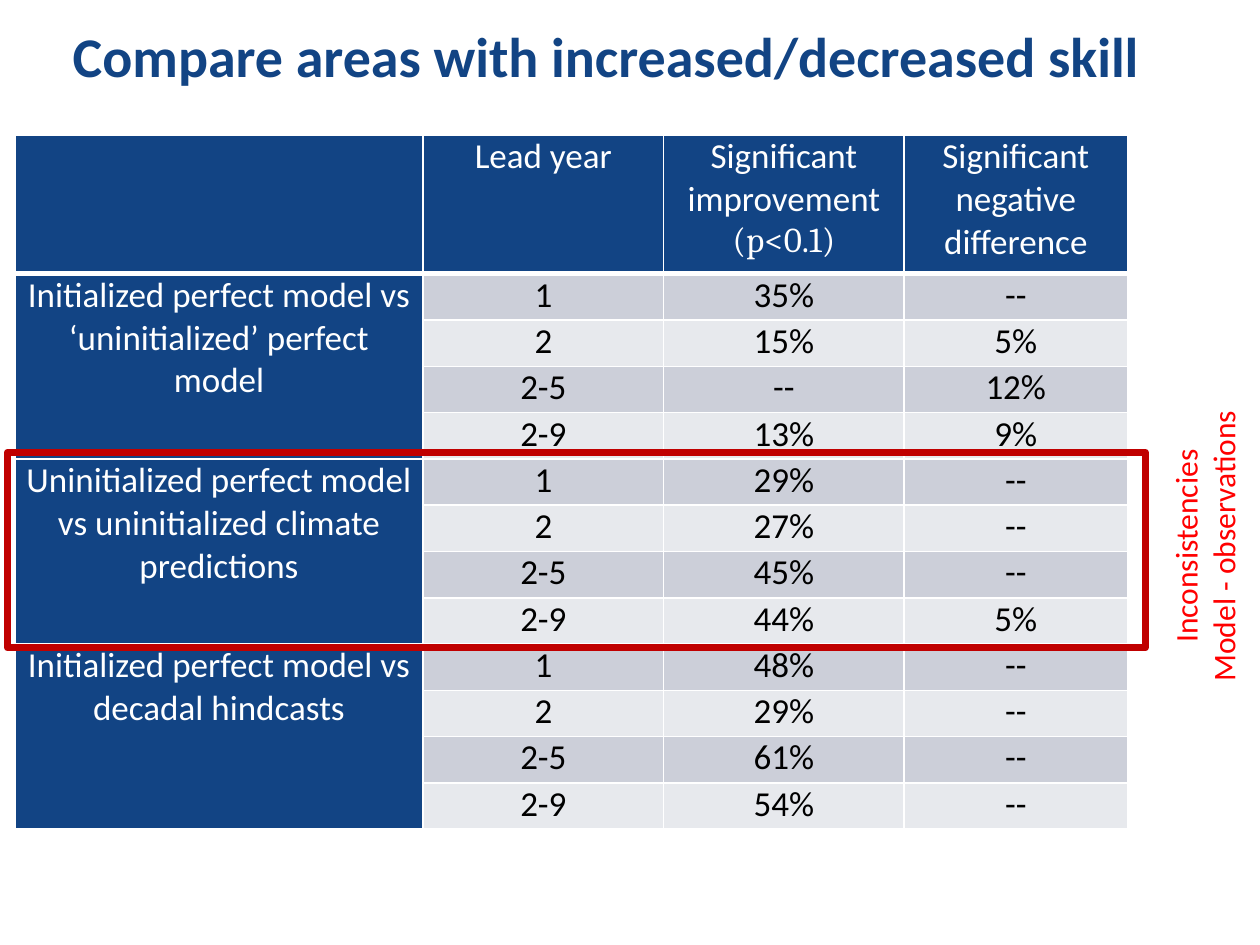
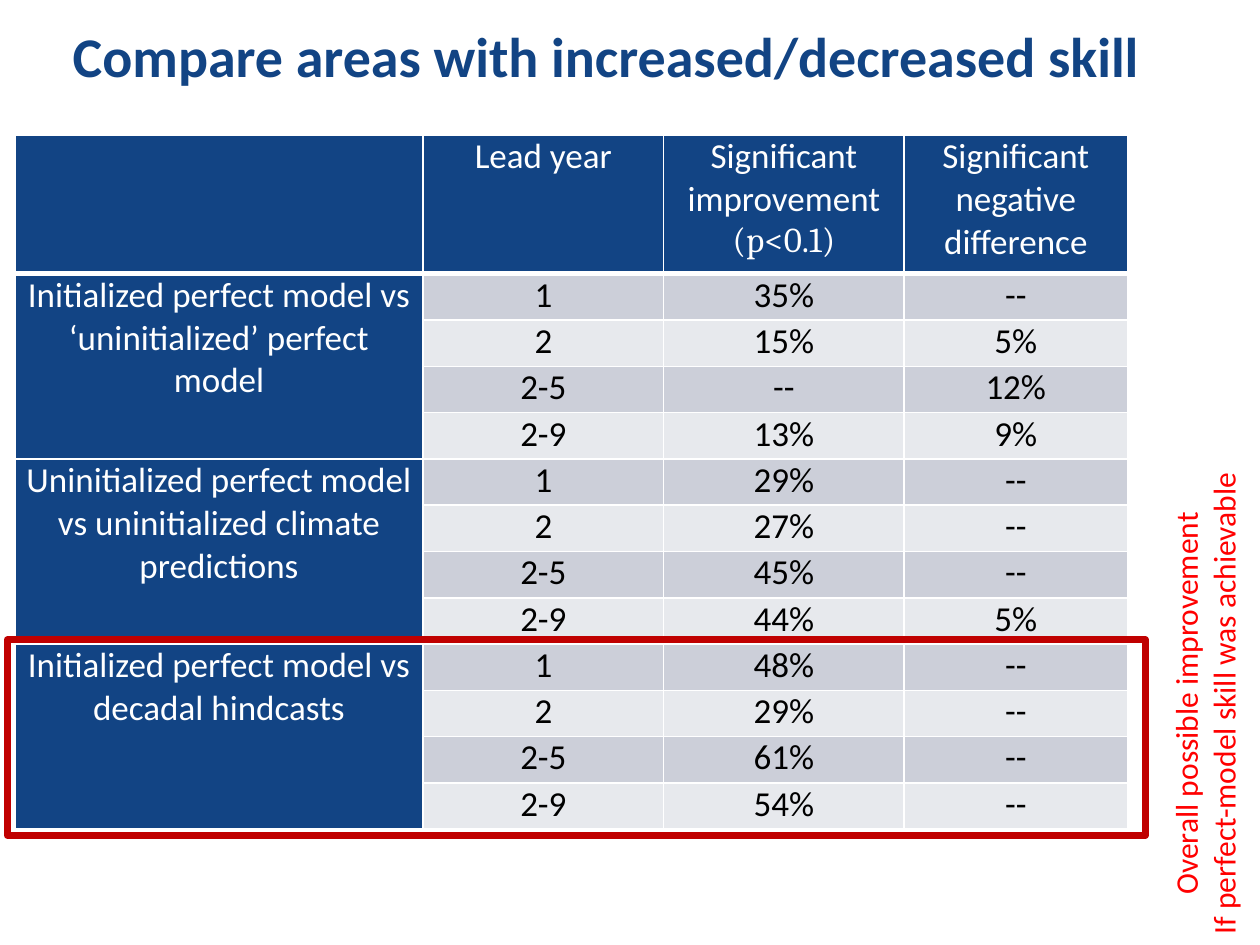
from lxml import etree
from pptx import Presentation
from pptx.dml.color import RGBColor
from pptx.enum.shapes import MSO_SHAPE
from pptx.enum.text import MSO_ANCHOR, MSO_AUTO_SIZE, PP_ALIGN
from pptx.oxml.ns import qn
from pptx.util import Cm, Pt

RECT = MSO_SHAPE.RECTANGLE
MIDDLE = MSO_ANCHOR.MIDDLE
GROW = MSO_AUTO_SIZE.SHAPE_TO_FIT_TEXT
CENTER = PP_ALIGN.CENTER

HEX = {"navy": "124484", "white": "FFFFFF", "black": "000000", "dark": "CCCFD9",
       "light": "E7E9ED", "frame": "C00000", "note": "FF0000"}
TITLE = {"name": "Calibri", "size": Pt(32), "bold": True}
CELL = {"name": "Calibri", "size": Pt(20)}
MATH = {"name": "Cambria", "size": Pt(20)}
NOTE = {"name": "Calibri", "size": Pt(18)}

# Table content
HEAD = ["", "Lead year", "Significant improvement\n(p<0.1)",
        "Significant negative difference"]
YEARS = ["1", "2", "2-5", "2-9"]
GROUPS = [
    ("Initialized perfect model vs ‘uninitialized’ perfect model",
     ["35%", "15%", "--", "13%"], ["--", "5%", "12%", "9%"]),
    ("Uninitialized perfect model vs uninitialized climate predictions",
     ["29%", "27%", "45%", "44%"], ["--", "--", "--", "5%"]),
    ("Initialized perfect model vs decadal hindcasts",
     ["48%", "29%", "61%", "54%"], ["--", "--", "--", "--"]),
]
COLS = [8.23, 4.85, 4.85, 4.5]
HEAD_H = 2.8

# Boxes: left, top, width, height in cm
TITLE_BOX = (0.3, 0.38, 23.85, 1.63)
TABLE_BOX = (0.3, 2.72, sum(COLS), 14)

# Marked group per slide: frame box, note box before its turn, note
SLIDES = [
    ((0.15, 9.12, 22.94, 3.94), (21.26, 10.11, 6.05, 1.8),
     "Inconsistencies\nModel - observations"),
    ((0.15, 12.9, 22.94, 3.94), (19.32, 13.28, 9.94, 1.8),
     "Overall possible improvement\nIf perfect-model skill was achievable"),
]


def color(key):
    return RGBColor.from_string(HEX[key])


def place(box):
    return [Cm(n) for n in box]


def style(font, look, key):
    for name, value in look.items():
        setattr(font, name, value)
    font.color.rgb = color(key)


def write(frame, text, look, key):
    frame.text = text
    for para in frame.paragraphs:
        para.alignment = CENTER
        style(para.font, look, key)
        for run in para.runs:
            style(run.font, look, key)


def add_title(slide, box):
    frame = slide.shapes.add_textbox(*place(box)).text_frame
    frame.word_wrap = True
    frame.vertical_anchor = MIDDLE
    write(frame, "Compare areas with increased/decreased skill", TITLE, "navy")
    frame.paragraphs[0].line_spacing = 0.9


def edge(cell, base):
    props = cell._tc.get_or_add_tcPr()
    for side in "LRTB":
        width = base if side == "B" else 1
        line = etree.SubElement(props, qn("a:ln" + side), w=str(Pt(width)))
        fill = etree.SubElement(line, qn("a:solidFill"))
        etree.SubElement(fill, qn("a:srgbClr"), val=HEX["white"])


def fill_cell(cell, text, back, ink, base=1):
    edge(cell, base)
    cell.fill.solid()
    cell.fill.fore_color.rgb = color(back)
    margins = {"margin_left": Cm(0.18), "margin_right": Cm(0.18),
               "margin_top": 0, "margin_bottom": 0}
    for name, value in margins.items():
        setattr(cell, name, value)
    write(cell.text_frame, text, CELL, ink)


def add_skill(slide, box):
    count = len(GROUPS) * len(YEARS)
    table = slide.shapes.add_table(count + 1, len(COLS), *place(box)).table
    for col, width in zip(table.columns, COLS):
        col.width = Cm(width)
    for row in table.rows:
        row.height = Cm((box[3] - HEAD_H) / count)
    table.rows[0].height = Cm(HEAD_H)

    # Header row
    for c, text in enumerate(HEAD):
        fill_cell(table.cell(0, c), text, "navy", "white", 3)
    style(table.cell(0, 2).text_frame.paragraphs[1].runs[0].font, MATH, "white")

    # Groups of lead years
    for g, (label, gains, drops) in enumerate(GROUPS):
        top = 1 + g * len(YEARS)
        for i, values in enumerate(zip(YEARS, gains, drops)):
            fill_cell(table.cell(top + i, 0), "" if i else label, "navy", "white")
            for c, text in enumerate(values, 1):
                back = "light" if i % 2 else "dark"
                fill_cell(table.cell(top + i, c), text, back, "black")
        table.cell(top, 0).merge(table.cell(top + len(YEARS) - 1, 0))


def add_frame(slide, box):
    frame = slide.shapes.add_shape(RECT, *place(box))
    frame.shadow.inherit = False
    frame.fill.background()
    frame.line.color.rgb = color("frame")
    frame.line.width = Pt(4)


def add_note(slide, box, text):
    note = slide.shapes.add_textbox(*place(box))
    note.rotation = 270
    note.text_frame.word_wrap = False
    note.text_frame.auto_size = GROW
    write(note.text_frame, text, NOTE, "note")


def main():
    deck = Presentation()
    deck.slide_width, deck.slide_height = Cm(25.4), Cm(19.05)
    for frame, side, text in SLIDES:
        slide = deck.slides.add_slide(deck.slide_layouts[6])
        add_title(slide, TITLE_BOX)
        add_skill(slide, TABLE_BOX)
        add_frame(slide, frame)
        add_note(slide, side, text)
    deck.save("out.pptx")


if __name__ == "__main__":
    main()
